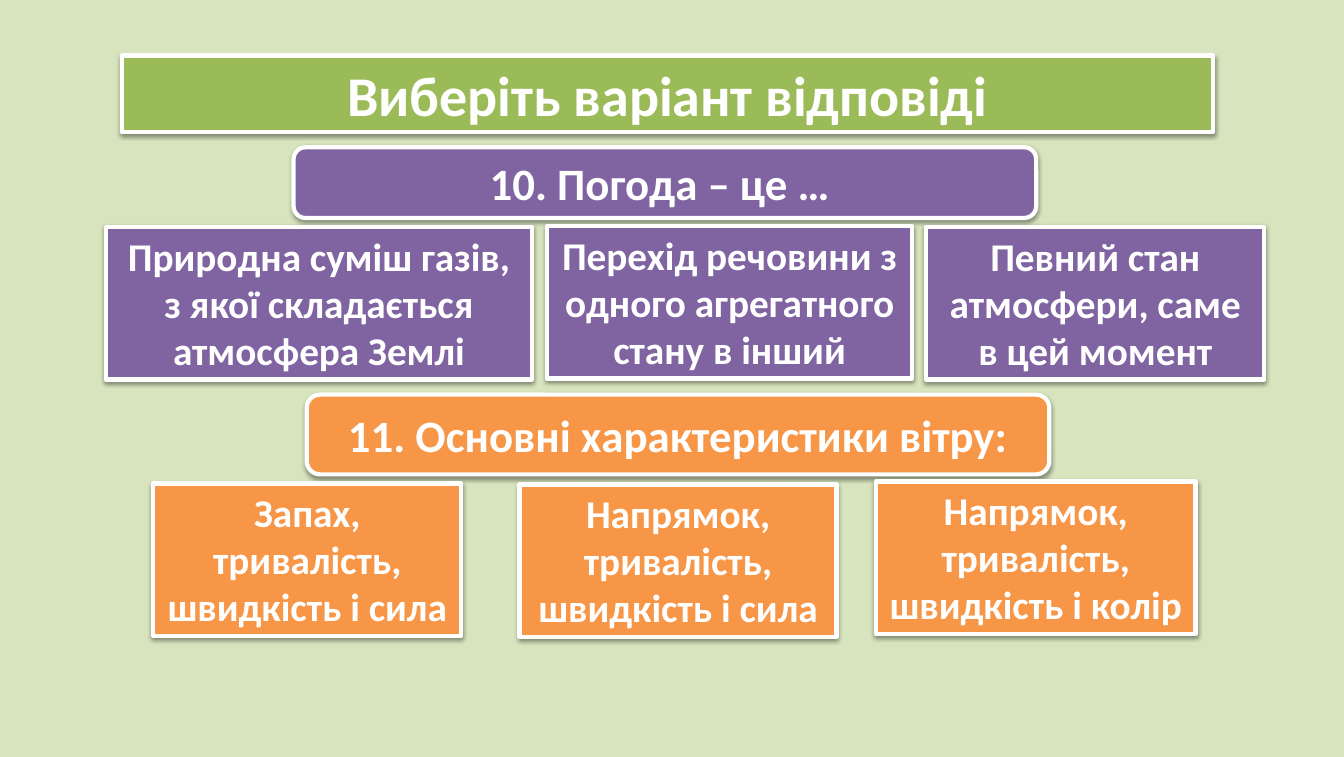
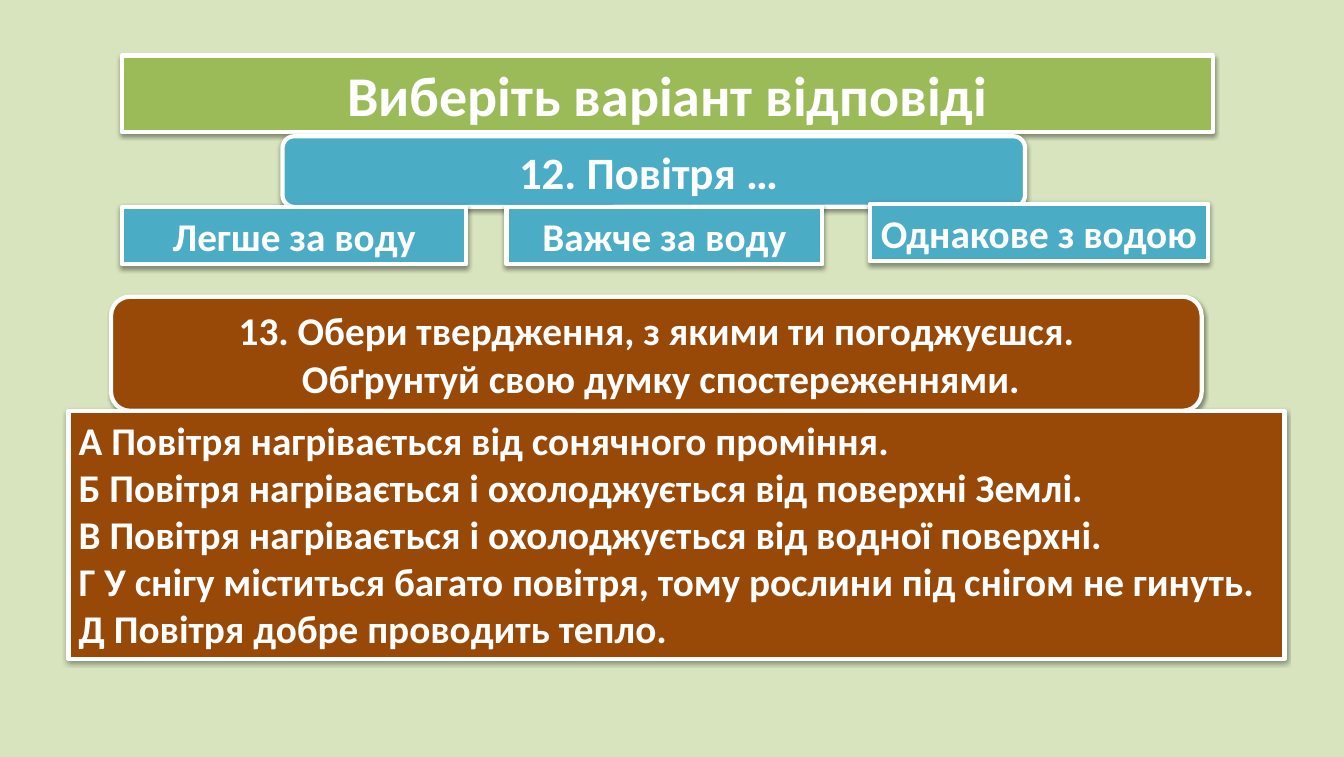
from dataclasses import dataclass

from lxml import etree
from pptx import Presentation
from pptx.dml.color import RGBColor
from pptx.enum.shapes import MSO_SHAPE
from pptx.enum.text import MSO_ANCHOR, MSO_AUTO_SIZE, PP_ALIGN
from pptx.oxml.ns import qn
from pptx.presentation import Presentation as Deck
from pptx.shapes.autoshape import Shape
from pptx.slide import Slide
from pptx.util import Emu, Pt

RECT, ROUND = MSO_SHAPE.RECTANGLE, MSO_SHAPE.ROUNDED_RECTANGLE
TOP, MIDDLE = MSO_ANCHOR.TOP, MSO_ANCHOR.MIDDLE
LEFT, CENTER = PP_ALIGN.LEFT, PP_ALIGN.CENTER
FIXED = MSO_AUTO_SIZE.NONE
PX = 9144  # 100 px to the inch
BODY_PAGE, TITLE_PAGE = 1, 5  # layouts of the template


@dataclass(frozen=True)
class Theme:
    back: str = "D7E4BD"
    white: str = "FFFFFF"
    green: str = "9BBB59"
    purple: str = "8064A2"
    orange: str = "F79646"
    blue: str = "4BACC6"
    brown: str = "984807"
    font: str = "Calibri"
    title: int = 40
    ask: int = 32
    text: int = 28
    edge: int = 3


THEME = Theme()


@dataclass(frozen=True)
class Box:
    left: int
    top: int
    width: int
    height: int
    text: str


@dataclass(frozen=True)
class Question:
    fill: str
    ask: Box
    answers: tuple[Box, ...] = ()
    claims: Box | None = None
    size: int = THEME.ask


TITLE = Box(121, 55, 1081, 76, "Виберіть варіант відповіді")

PAGES: tuple[tuple[Question, ...], ...] = (
    (
        Question(
            THEME.purple,
            Box(291, 146, 736, 70, "10. Погода – це … "),
            (
                Box(105, 225, 422, 151, "Природна суміш газів, з якої складається атмосфера Землі"),
                Box(542, 224, 362, 151, "Перехід речовини з одного агрегатного стану в інший"),
                Box(918, 225, 335, 151, "Певний стан атмосфери, саме в цей момент"),
            ),
        ),
        Question(
            THEME.orange,
            Box(304, 391, 736, 79, "11. Основні характеристики вітру:"),
            (
                Box(152, 479, 305, 151, "Запах, тривалість, швидкість і сила"),
                Box(515, 480, 314, 151, "Напрямок, тривалість, швидкість і сила"),
                Box(868, 477, 317, 151, "Напрямок, тривалість, швидкість і колір"),
            ),
        ),
    ),
    (
        Question(
            THEME.blue,
            Box(280, 135, 736, 70, "12. Повітря … "),
            (
                Box(121, 205, 341, 57, "Легше за воду"),
                Box(502, 205, 313, 57, "Важче за воду"),
                Box(862, 202, 335, 57, "Однакове з водою"),
            ),
        ),
        Question(
            THEME.brown,
            Box(110, 294, 1081, 113,
                "13. Обери твердження, з якими ти погоджуєшся.\n"
                " Обґрунтуй свою думку спостереженнями."),
            claims=Box(68, 407, 1205, 246,
                       "А Повітря нагрівається від сонячного проміння.\n"
                       "Б Повітря нагрівається і охолоджується від поверхні Землі.\n"
                       "В Повітря нагрівається і охолоджується від водної поверхні.\n"
                       "Г У снігу міститься багато повітря, тому рослини під снігом не гинуть.\n"
                       "Д Повітря добре проводить тепло."),
            size=THEME.text,
        ),
    ),
)


def color(code: str) -> RGBColor:
    return RGBColor.from_string(code)


def shade(shape: Shape) -> None:
    """Give the shape a soft shadow straight below it."""
    shape.shadow.inherit = False
    effects = shape._element.spPr.find(qn("a:effectLst"))
    outer = etree.SubElement(effects, qn("a:outerShdw"), blurRad="40000",
                             dist="20000", dir="5400000", rotWithShape="0")
    black = etree.SubElement(outer, qn("a:srgbClr"), val="000000")
    etree.SubElement(black, qn("a:alpha"), val="38000")


def style(shape: Shape, box: Box, fill: str, size: int,
          anchor: MSO_ANCHOR = MIDDLE, align: PP_ALIGN = CENTER) -> None:
    """Place a shape or placeholder and dress it as a card."""
    shape.left, shape.top = Emu(box.left * PX), Emu(box.top * PX)
    shape.width, shape.height = Emu(box.width * PX), Emu(box.height * PX)
    shape.fill.solid()
    shape.fill.fore_color.rgb = color(fill)
    shape.line.color.rgb = color(THEME.white)
    shape.line.width = Pt(THEME.edge)
    shade(shape)

    frame = shape.text_frame
    frame.text = box.text
    frame.word_wrap = True
    frame.auto_size = FIXED
    frame.vertical_anchor = anchor
    for para in frame.paragraphs:
        para.alignment = align
        para.space_before = Pt(0)
        font = para.font
        font.name, font.size, font.bold = THEME.font, Pt(size), True
        font.color.rgb = color(THEME.white)


def add_card(slide: Slide, kind: MSO_SHAPE, box: Box, fill: str, size: int,
             anchor: MSO_ANCHOR = MIDDLE) -> None:
    shape = slide.shapes.add_shape(kind, 0, 0, PX, PX)
    style(shape, box, fill, size, anchor)


def fill_body(slide: Slide, box: Box, fill: str) -> None:
    """Use the body placeholder for a list without bullets, in front."""
    body = slide.placeholders[1]
    style(body, box, fill, THEME.text, TOP, LEFT)
    for para in body.text_frame.paragraphs:
        props = para._p.get_or_add_pPr()
        props.set("marL", "0")
        props.set("indent", "0")
        etree.SubElement(props, qn("a:buNone"))
        # Bullet settings come before the default run settings
        props.append(props.find(qn("a:defRPr")))
    slide.shapes._spTree.append(body._element)


def add_page(deck: Deck, page: tuple[Question, ...]) -> None:
    listed = any(item.claims for item in page)
    layout = deck.slide_layouts[BODY_PAGE if listed else TITLE_PAGE]
    slide = deck.slides.add_slide(layout)
    style(slide.shapes.title, TITLE, THEME.green, THEME.title)
    for item in page:
        add_card(slide, ROUND, item.ask, item.fill, item.size)
        for answer in item.answers:
            add_card(slide, RECT, answer, item.fill, THEME.text, TOP)
        if item.claims:
            fill_body(slide, item.claims, item.fill)


def main() -> None:
    deck = Presentation()
    deck.slide_width, deck.slide_height = Emu(1332 * PX), Emu(750 * PX)
    # Shared background
    back = deck.slide_master.background.fill
    back.solid()
    back.fore_color.rgb = color(THEME.back)
    for page in PAGES:
        add_page(deck, page)
    deck.save("out.pptx")


if __name__ == "__main__":
    main()
